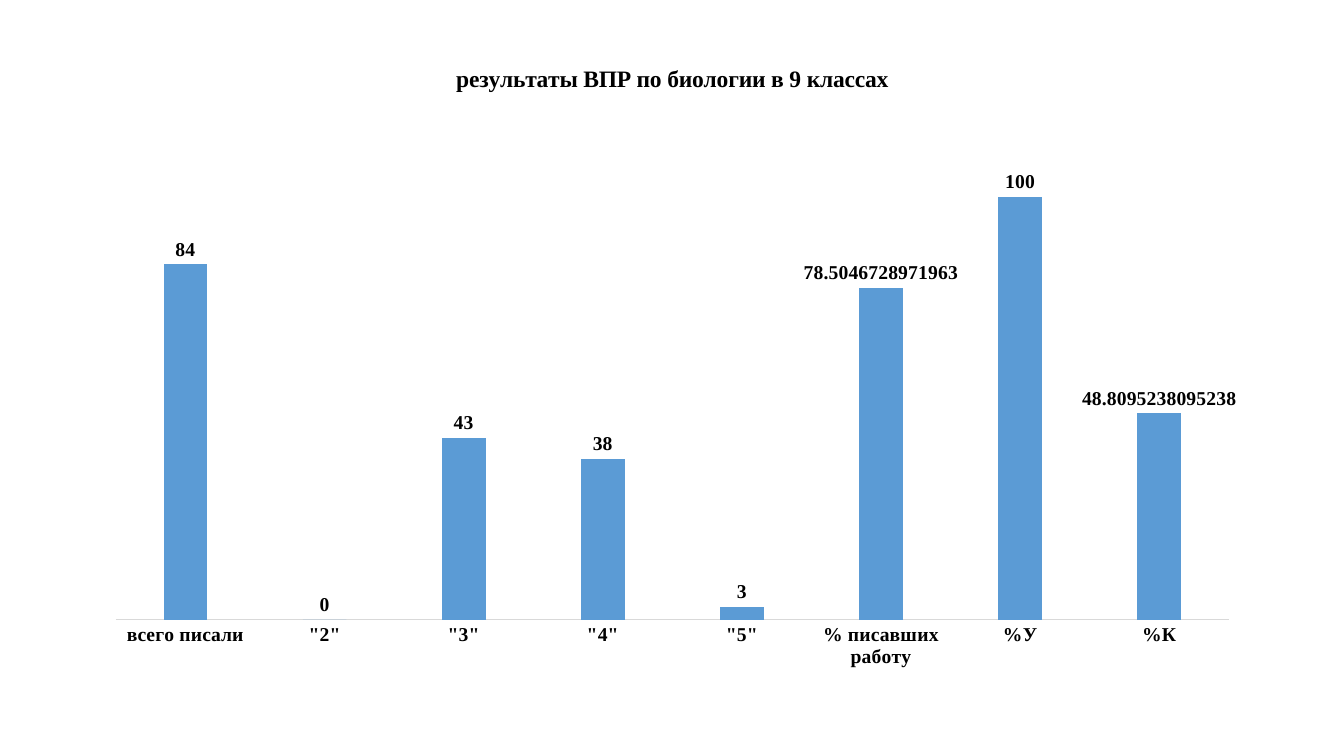
import pptx
import pptx.chart.data
import pptx.dml.color
import pptx.enum.chart
import pptx.util
from pptx.oxml import parse_xml
from pptx.oxml.ns import nsdecls

TITLE = "результаты ВПР по биологии в 9 классах"
RESULTS = [
    ("всего писали", 84),
    ('"2"', 0),
    ('"3"', 43),
    ('"4"', 38),
    ('"5"', 3),
    ("% писавших работу", 78.5),
    ("%У", 100),
    ("%К", 48.81),
]
LONG_LABELS = {5: "78.5046728971963", 7: "48.8095238095238"}
SLIDE_SIZE = (1344, 756)
CHART_BOX = (93, 41, 1159, 640)
PLOT_BOX = (116, 112, 1113, 508)
TITLE_CORNER = (452, 59)

FONT = "Times New Roman"
BLACK = pptx.dml.color.RGBColor(0x00, 0x00, 0x00)
BAR_BLUE = pptx.dml.color.RGBColor(0x5B, 0x9B, 0xD5)
AXIS_GREY = pptx.dml.color.RGBColor(0xD9, 0xD9, 0xD9)
EMU_PER_PX = 914400 / 100.8


def px(length):
    return pptx.util.Emu(round(length * EMU_PER_PX))


def style(font, size=14, color=BLACK, bold=True):
    font.name = FONT
    font.size = pptx.util.Pt(size)
    font.bold = bold
    font.color.rgb = color


def write(frame, text, **font_format):
    frame.word_wrap = False
    run = frame.paragraphs[0].add_run()
    run.text = text
    style(run.font, **font_format)


def manual_layout(left, top, width=None, height=None):
    chart_left, chart_top, chart_width, chart_height = CHART_BOX
    target = '<c:layoutTarget val="inner"/>' if width else ""
    fractions = {"x": (left - chart_left) / chart_width,
                 "y": (top - chart_top) / chart_height}
    if width:
        fractions["w"] = width / chart_width
        fractions["h"] = height / chart_height
    modes = '<c:xMode val="edge"/><c:yMode val="edge"/>'
    places = "".join(f'<c:{key} val="{value:.4f}"/>' for key, value in fractions.items())
    return parse_xml(f'<c:layout {nsdecls("c")}><c:manualLayout>{target}{modes}{places}'
                     '</c:manualLayout></c:layout>')


def place(element, layout, index):
    for previous in element.xpath("./c:layout"):
        element.remove(previous)
    element.insert(index, layout)


def add_results_chart(slide):
    chart_data = pptx.chart.data.CategoryChartData()
    chart_data.categories = [name for name, value in RESULTS]
    chart_data.add_series("Series 1", [value for name, value in RESULTS])
    chart = slide.shapes.add_chart(
        pptx.enum.chart.XL_CHART_TYPE.COLUMN_CLUSTERED,
        *[px(length) for length in CHART_BOX], chart_data).chart
    chart.has_legend = False
    style(chart.font)

    chart.has_title = True
    write(chart.chart_title.text_frame, TITLE, size=16.8)
    chart.chart_title.include_in_layout = False
    place(chart.chart_title._element, manual_layout(*TITLE_CORNER), 1)

    values = chart.value_axis
    values.minimum_scale = 0
    values.maximum_scale = 120
    values.has_major_gridlines = False
    values.visible = False

    marks = chart.category_axis
    marks.major_tick_mark = pptx.enum.chart.XL_TICK_MARK.NONE
    marks.format.line.color.rgb = AXIS_GREY
    marks.format.line.width = pptx.util.Pt(0.75)
    style(marks.tick_labels.font)

    bars = chart.plots[0]
    bars.gap_width = 219
    bars.overlap = -27
    bars.vary_by_categories = False
    series = bars.series[0]
    series.format.fill.solid()
    series.format.fill.fore_color.rgb = BAR_BLUE
    above = pptx.enum.chart.XL_LABEL_POSITION.OUTSIDE_END
    labels = series.data_labels
    labels.show_value = True
    labels.position = above
    style(labels.font)
    for index, text in LONG_LABELS.items():
        label = series.points[index].data_label
        write(label.text_frame, text)
        label.position = above

    plot_area = chart._chartSpace.xpath("./c:chart/c:plotArea")[0]
    place(plot_area, manual_layout(*PLOT_BOX), 0)


def main():
    presentation = pptx.Presentation()
    presentation.slide_width, presentation.slide_height = map(px, SLIDE_SIZE)
    slide = presentation.slides.add_slide(presentation.slide_layouts[6])
    add_results_chart(slide)
    presentation.save("out.pptx")


if __name__ == "__main__":
    main()
